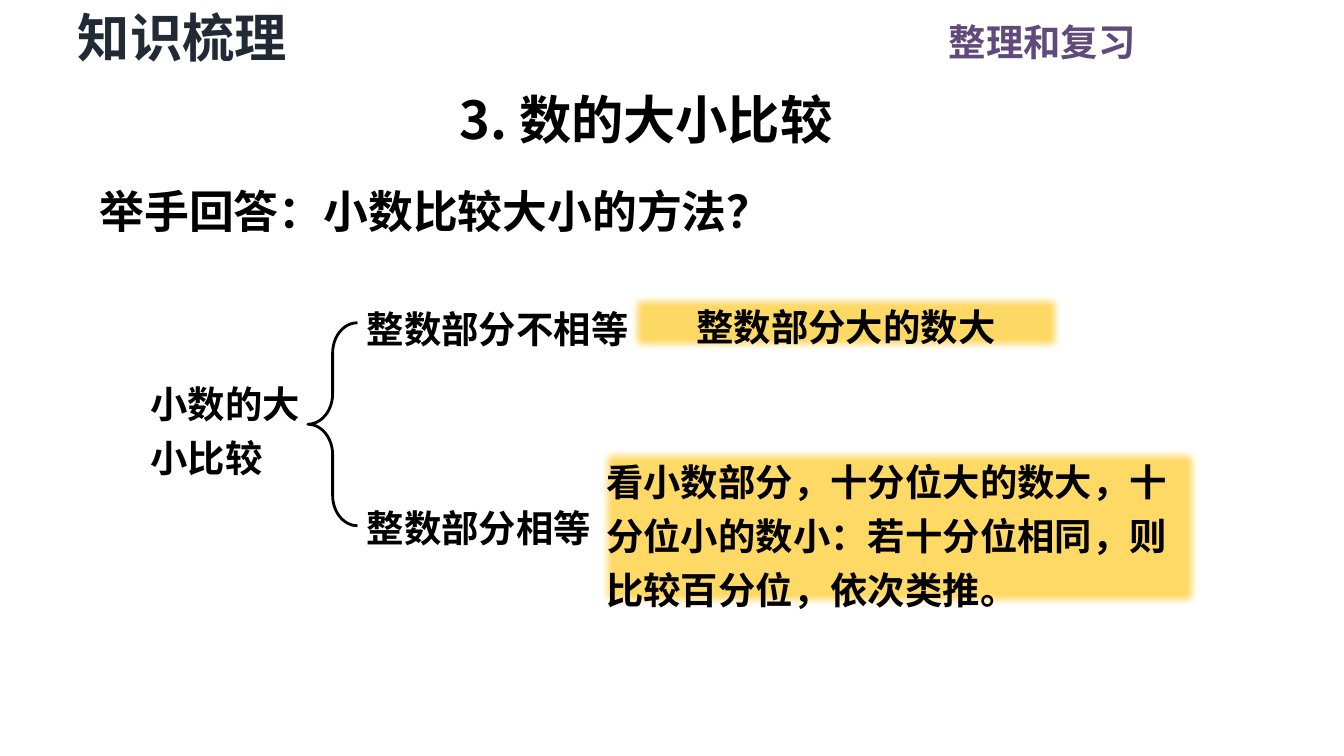
from lxml import etree
from pptx import Presentation
from pptx import util as u
from pptx.dml.color import RGBColor
from pptx.enum import shapes, text
from pptx.oxml.ns import qn

FONT = "Noto Sans CJK SC"
BLACK, GOLD = "000000", "FFD966"
LEFT, MID, RIGHT = (text.PP_ALIGN.LEFT, text.PP_ALIGN.CENTER,
                    text.PP_ALIGN.RIGHT)

deck = Presentation()
deck.slide_width = u.Inches(10)
deck.slide_height = deck.slide_width * 9 // 16
slide = deck.slides.add_slide(deck.slide_layouts[6])


def hue(code):
    return RGBColor.from_string(code)


def area(left, top, width, height):
    """Turn percent of the slide's width and height into lengths."""
    wide, high = deck.slide_width / 100, deck.slide_height / 100
    return [int(n) for n in (left * wide, top * high,
                             width * wide, height * high)]


brace = slide.shapes.add_shape(shapes.MSO_SHAPE.LEFT_BRACE,
                               *area(22.9, 42.7, 3.7, 26.85))
brace.shadow.inherit = False
brace.adjustments[0] = 0.61
brace.fill.background()
brace.line.color.rgb = hue(BLACK)
brace.line.width = u.Pt(1.5)

# words, place in percent, size, colour, alignment, line spacing, fill
items = [
    ("整理和复习", (57.9, 1.65, 27.6, 7.82), 20, "604A7B", RIGHT, 1, None),
    ("知识梳理", (5.1, 0, 20.2, 9.78), 28, "222A35", LEFT, 1, None),
    ("3. 数的大小比较", (33.5, 10.8, 33.5, 9.78), 28, BLACK, LEFT, 1, None),
    ("举手回答：小数比较大小的方法？", (6.7, 22.22, 57, 9.96), 24, BLACK,
     LEFT, 1.2, None),
    ("整数部分大的数大", (46.6, 38.4, 32.7, 8.53), 20, BLACK, MID, 1.2, GOLD),
    ("整数部分不相等", (26.6, 38.55, 21.4, 8.53), 20, BLACK, LEFT, 1.2, None),
    ("看小数部分，十分位大的数大，十分位小的数小：若十分位相同，则比较百分位，依次类推。",
     (44.4, 58.85, 45.1, 21.87), 20, BLACK, LEFT, 1.2, GOLD),
    ("小数的大小比较", (10.5, 48.53, 12.8, 15.64), 20, BLACK, LEFT, 1.2, None),
    ("整数部分相等", (26.6, 64.89, 21.4, 8.53), 20, BLACK, LEFT, 1.2, None),
]
frame_look = {
    "word_wrap": True,
    "vertical_anchor": text.MSO_ANCHOR.TOP,
    "margin_left": u.Inches(0.07), "margin_right": u.Inches(0.07),
    "margin_top": u.Inches(0.04), "margin_bottom": u.Inches(0.04),
}

for words, place, size, ink, align, space, fill in items:
    if fill:
        box = slide.shapes.add_shape(shapes.MSO_SHAPE.RECTANGLE, *area(*place))
        box.shadow.inherit = False
        box.fill.solid()
        box.fill.fore_color.rgb = hue(fill)
        box.line.fill.background()
        glow = box.fill._xPr.find(qn("a:effectLst"))
        etree.SubElement(glow, qn("a:softEdge"), rad=str(u.Pt(5)))
    else:
        box = slide.shapes.add_textbox(*area(*place))
    frame = box.text_frame
    for key, value in frame_look.items():
        setattr(frame, key, value)
    if align == RIGHT:
        frame.margin_left = frame.margin_right = u.Inches(0.1)
        frame.margin_top = frame.margin_bottom = u.Inches(0.05)
    para = frame.paragraphs[0]
    para.alignment, para.line_spacing = align, space
    run = para.add_run()
    run.text = words
    look = {"name": FONT, "size": u.Pt(size), "bold": True}
    for key, value in look.items():
        setattr(run.font, key, value)
    run.font.color.rgb = hue(ink)
    etree.SubElement(run.font._rPr, qn("a:ea"), typeface=FONT)

deck.save("out.pptx")
